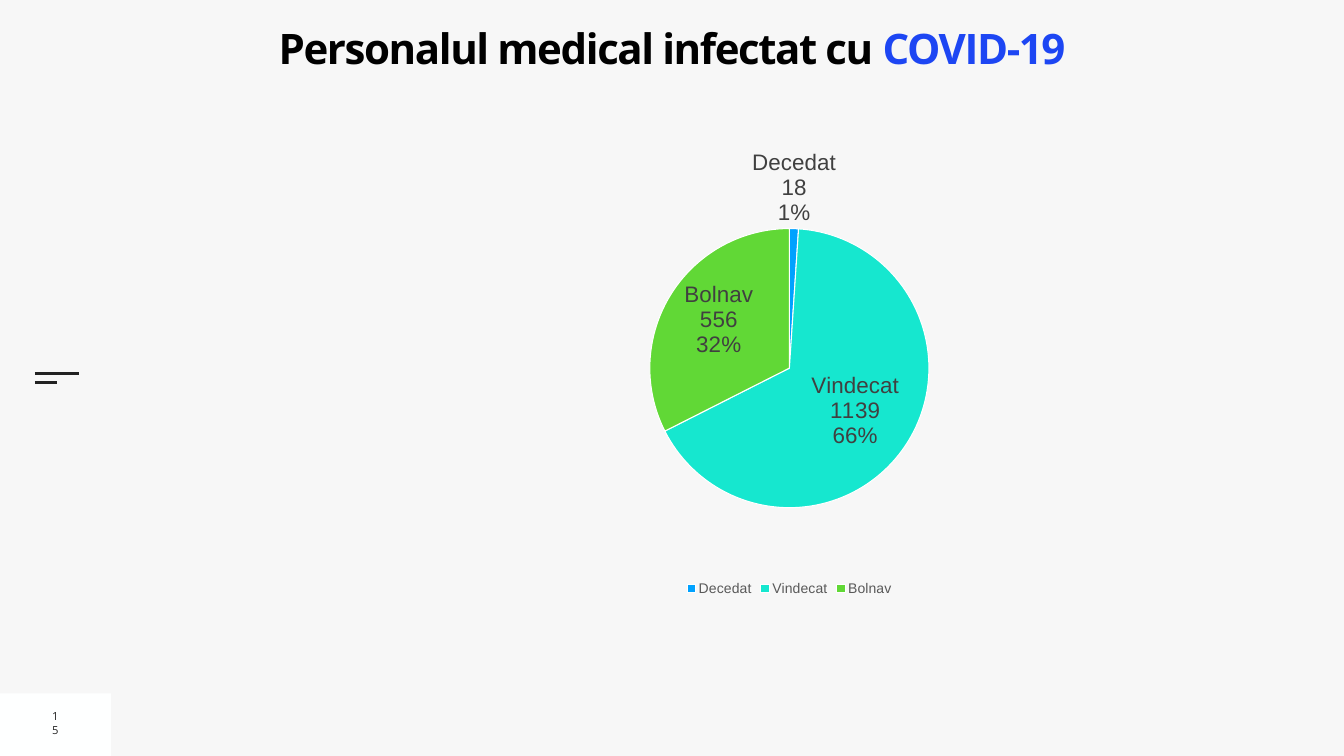
"""Build the slide on infected medical staff with its pie chart."""
import pptx
import pptx.chart.data
import pptx.dml.color
import pptx.enum.chart
import pptx.enum.shapes
import pptx.enum.text
import pptx.oxml.ns
import pptx.oxml.xmlchemy
import pptx.util

Inches, Pt = pptx.util.Inches, pptx.util.Pt
RGBColor = pptx.dml.color.RGBColor
OxmlElement = pptx.oxml.xmlchemy.OxmlElement
BACKGROUND = RGBColor(0xF7, 0xF7, 0xF7)
CORNER = RGBColor(0xFE, 0xFF, 0xFF)
BLACK = RGBColor(0x00, 0x00, 0x00)
WHITE = RGBColor(0xFF, 0xFF, 0xFF)
DARK = RGBColor(0x22, 0x22, 0x22)
LABEL_GREY = RGBColor(0x40, 0x40, 0x40)
LEGEND_GREY = RGBColor(0x59, 0x59, 0x59)
ACCENT = RGBColor(0x1D, 0x46, 0xF3)
CASES = [
    ("Decedat", 18, RGBColor(0x00, 0xA2, 0xFF)),
    ("Vindecat", 1139, RGBColor(0x16, 0xE7, 0xCF)),
    ("Bolnav", 556, RGBColor(0x61, 0xD8, 0x36)),
]
PLOT_SHARES = {"x": 0.25, "y": 0.19, "w": 0.5, "h": 0.61}


def set_font(font, name, size, color, bold=False):
    for key, value in {"name": name, "size": Pt(size), "bold": bold}.items():
        setattr(font, key, value)
    font.color.rgb = color


deck = pptx.Presentation()
deck.slide_width, deck.slide_height = Inches(26.67), Inches(15)
page = deck.slides.add_slide(deck.slide_layouts[5])
page.background.fill.solid()
page.background.fill.fore_color.rgb = BACKGROUND

corner = page.shapes.add_shape(
    pptx.enum.shapes.MSO_SHAPE.RECTANGLE, 0, Inches(13.76), Inches(2.2), Inches(1.24))
corner.shadow.inherit = False
corner.fill.solid()
corner.fill.fore_color.rgb = CORNER
corner.line.fill.background()

menu_left, menu_width = 0.69, 0.88
for top, share in ((7.41, 1), (7.59, 0.5)):
    bar = page.shapes.add_connector(
        pptx.enum.shapes.MSO_CONNECTOR.STRAIGHT, Inches(menu_left), Inches(top),
        Inches(menu_left + menu_width * share), Inches(top))
    bar.line.color.rgb = DARK
    bar.line.width = Pt(3)
    properties = bar._element.find(pptx.oxml.ns.qn("p:spPr"))
    properties.append(OxmlElement("a:effectLst"))

title = page.shapes.title
title.left, title.top = 0, Inches(0.45)
title.width, title.height = deck.slide_width, Inches(1.58)
number = page.shapes.add_textbox(Inches(0.93), Inches(14.09), Inches(0.34), Inches(0.51))
for box, inset, anchor in (
        (title, 0, pptx.enum.text.MSO_ANCHOR.TOP),
        (number, 0.1, pptx.enum.text.MSO_ANCHOR.MIDDLE)):
    frame = box.text_frame
    settings = {"word_wrap": True, "vertical_anchor": anchor,
                "auto_size": pptx.enum.text.MSO_AUTO_SIZE.NONE}
    for side in ("left", "top", "right", "bottom"):
        settings["margin_" + side] = Inches(inset)
    for key, value in settings.items():
        setattr(frame, key, value)
    frame.paragraphs[0].alignment = pptx.enum.text.PP_ALIGN.CENTER

for text, color in (("Personalul medical infectat cu ", BLACK), ("COVID-19", ACCENT)):
    span = title.text_frame.paragraphs[0].add_run()
    span.text = text
    set_font(span.font, "Open Sans", 60, color, True)
    span._r.get_or_add_rPr().set("spc", "-200")

span = number.text_frame.paragraphs[0].add_run()
span.text = "15"
set_font(span.font, "Open Sans", 16, DARK)

data = pptx.chart.data.CategoryChartData()
data.categories = [name for name, count, color in CASES]
data.add_series("Series 1", [count for name, count, color in CASES])
chart = page.shapes.add_chart(
    pptx.enum.chart.XL_CHART_TYPE.PIE, Inches(10.11), Inches(2.81),
    Inches(11.11), Inches(9.08), data).chart
chart.has_title = False
set_font(chart.font, "Arial", 20, BLACK)
chart.has_legend = True
chart.legend.position = pptx.enum.chart.XL_LEGEND_POSITION.BOTTOM
chart.legend.include_in_layout = False
set_font(chart.legend.font, "Arial", 20, LEGEND_GREY)

plot = chart.plots[0]
plot.vary_by_categories = True
for index, (name, count, color) in enumerate(CASES):
    slice_format = plot.series[0].points[index].format
    slice_format.fill.solid()
    slice_format.fill.fore_color.rgb = color
    slice_format.line.color.rgb = WHITE
    slice_format.line.width = Pt(1.5)

labels = plot.series[0].data_labels
label_settings = {
    "show_category_name": True, "show_value": True, "show_percentage": True,
    "show_legend_key": False, "show_series_name": False,
    "position": pptx.enum.chart.XL_LABEL_POSITION.BEST_FIT}
for key, value in label_settings.items():
    setattr(labels, key, value)
set_font(labels.font, "Arial", 32, LABEL_GREY)
separator = OxmlElement("c:separator")
separator.text = "\n"
labels._element.find(pptx.oxml.ns.qn("c:showBubbleSize")).addnext(separator)

plot_area = chart._chartSpace.find(".//" + pptx.oxml.ns.qn("c:plotArea"))
for old_layout in plot_area.findall(pptx.oxml.ns.qn("c:layout")):
    plot_area.remove(old_layout)
layout = OxmlElement("c:layout")
manual = OxmlElement("c:manualLayout")
layout.append(manual)
plot_area.insert(0, layout)
modes = {"layoutTarget": "inner", "xMode": "edge", "yMode": "edge"}
for tag, value in (modes | PLOT_SHARES).items():
    entry = OxmlElement("c:" + tag)
    entry.set("val", str(value))
    manual.append(entry)

deck.save("out.pptx")
